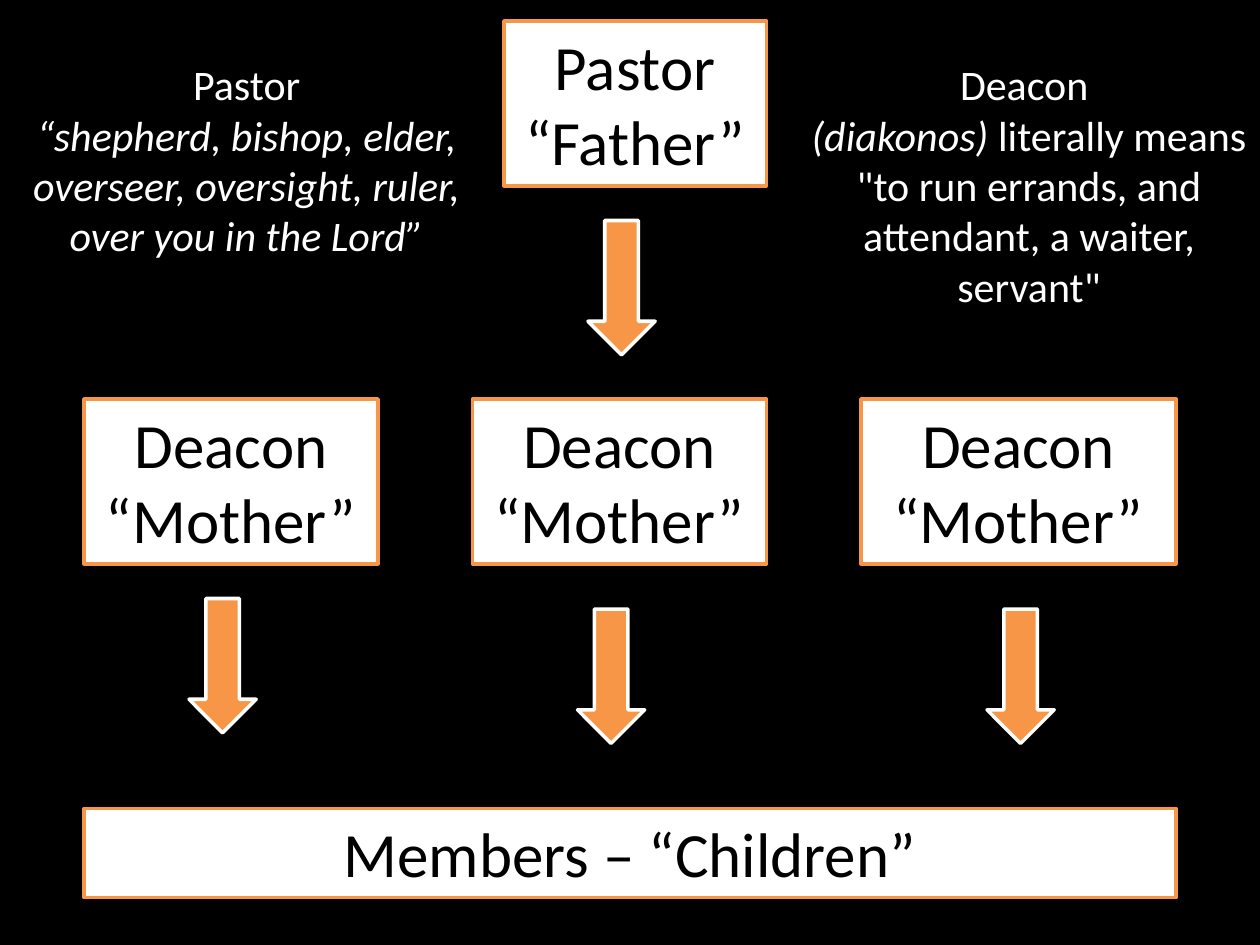
from dataclasses import dataclass

from pptx import Presentation
from pptx import util as u
from pptx.dml.color import RGBColor
from pptx.enum import shapes, text

PX = 7620  # EMU per px, 120 px to the inch
FONT = "Calibri"
COLORS = {
    "background": "000000",
    "paper": "FFFFFF",
    "ink": "000000",
    "accent": "F79646",
}


@dataclass(frozen=True)
class Area:
    left: int
    top: int
    width: int
    height: int

    def emu(self) -> list[int]:
        return [u.Emu(n * PX) for n in (self.left, self.top, self.width, self.height)]


@dataclass(frozen=True)
class Role:
    area: Area
    lines: tuple[str, ...]


@dataclass(frozen=True)
class Span:
    words: str
    italic: bool = False


@dataclass(frozen=True)
class Definition:
    area: Area
    lines: tuple[tuple[Span, ...], ...]


MOTHER = ("Deacon", "“Mother”")
ROLES = [
    Role(Area(480, 20, 250, 157), ("Pastor", "“Father”")),
    *(Role(Area(left, 380, width, 157), MOTHER)
      for left, width in ((80, 280), (450, 280), (820, 300))),
    Role(Area(80, 770, 1040, 85), ("Members – “Children”",)),
]
ARROWS = [Area(left, top, 64, 128)
          for left, top in ((560, 210), (180, 570), (550, 580), (940, 580))]
DEFINITIONS = [
    Definition(Area(760, 50, 440, 254), (
        (Span("Deacon "),),
        (Span("(diakonos) ", True), Span("literally means ")),
        (Span('"to run errands, and attendant, a waiter, servant"'),),
    )),
    Definition(Area(0, 50, 470, 206), (
        (Span("Pastor"),),
        (Span("“shepherd, bishop, elder,", True),),
        (Span("overseer, oversight, ruler,", True),),
        (Span("over you in the Lord”", True),),
    )),
]


def color(name: str) -> RGBColor:
    return RGBColor.from_string(COLORS[name])


def add_block(slide, kind, area: Area, fill: str, line: str):
    block = slide.shapes.add_shape(kind, *area.emu())
    block.shadow.inherit = False
    block.fill.solid()
    block.fill.fore_color.rgb = color(fill)
    block.line.color.rgb = color(line)
    block.line.width = u.Pt(2)
    return block


def style_text(frame, size: int, ink: str) -> None:
    frame.word_wrap = True
    for paragraph in frame.paragraphs:
        paragraph.alignment = text.PP_ALIGN.CENTER
        for run in paragraph.runs:
            run.font.name = FONT
            run.font.size = u.Pt(size)
            run.font.color.rgb = color(ink)


def add_role(slide, role: Role) -> None:
    box = add_block(slide, shapes.MSO_SHAPE.RECTANGLE, role.area, "paper", "accent")
    frame = box.text_frame
    frame.text = "\n".join(role.lines)
    frame.vertical_anchor = text.MSO_ANCHOR.TOP
    style_text(frame, 36, "ink")


def add_definition(slide, definition: Definition) -> None:
    frame = slide.shapes.add_textbox(*definition.area.emu()).text_frame
    frame.text = "\n" * (len(definition.lines) - 1)
    for paragraph, spans in zip(frame.paragraphs, definition.lines):
        for span in spans:
            run = paragraph.add_run()
            run.text = span.words
            run.font.italic = span.italic
    style_text(frame, 24, "paper")


def main() -> None:
    deck = Presentation()
    deck.slide_width, deck.slide_height = u.Emu(1200 * PX), u.Emu(900 * PX)
    slide = deck.slides.add_slide(deck.slide_layouts[6])
    slide.background.fill.solid()
    slide.background.fill.fore_color.rgb = color("background")

    for role in ROLES:
        add_role(slide, role)
    for arrow in ARROWS:
        add_block(slide, shapes.MSO_SHAPE.DOWN_ARROW, arrow, "accent", "paper")
    for definition in DEFINITIONS:
        add_definition(slide, definition)
    deck.save("out.pptx")


if __name__ == "__main__":
    main()
